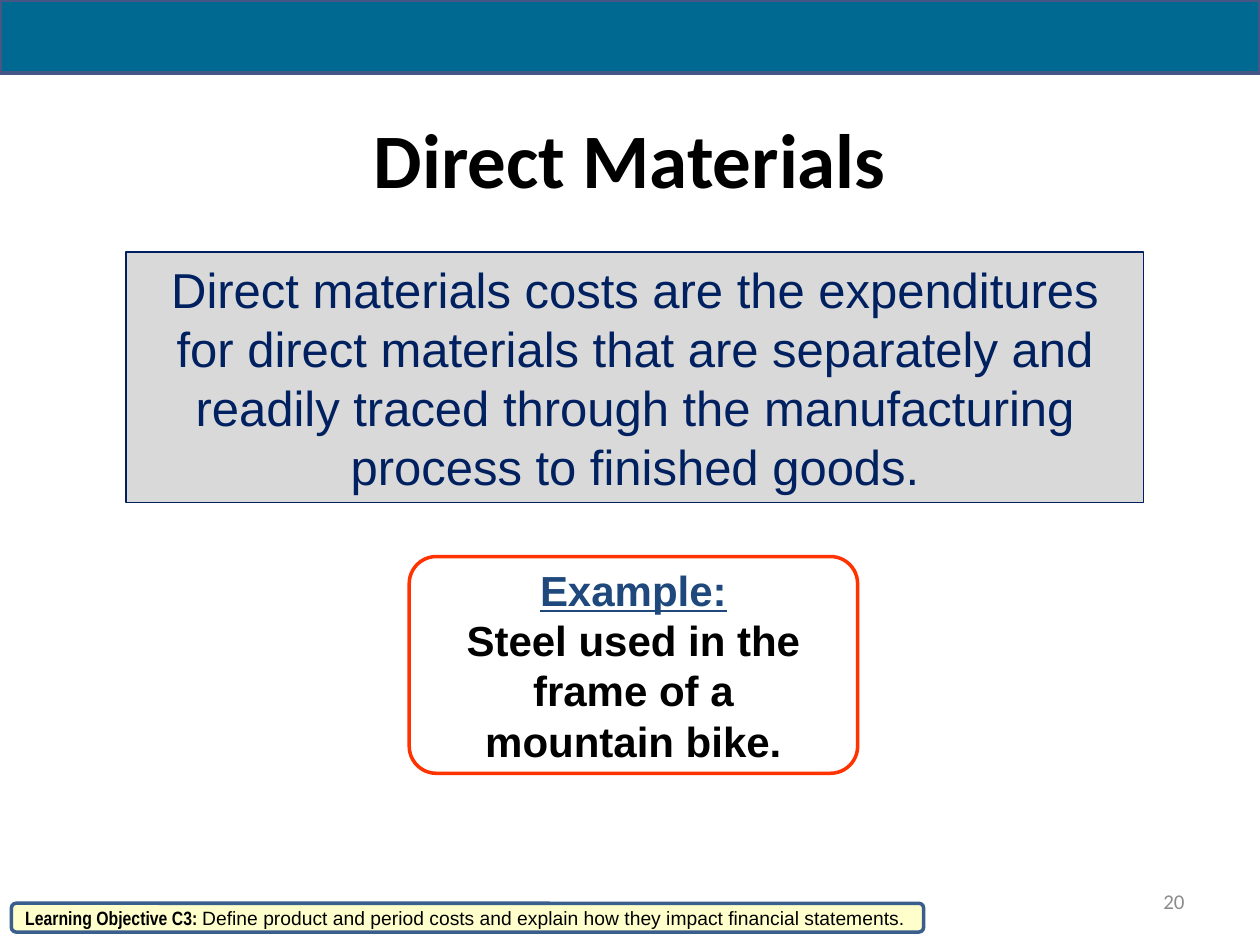
"""Build the Direct Materials slide."""
import dataclasses
import typing

import pptx
import pptx.dml.color
import pptx.enum.shapes
import pptx.enum.text
import pptx.util

Cm = pptx.util.Cm
RGBColor = pptx.dml.color.RGBColor
Shape = pptx.enum.shapes.MSO_SHAPE
Align = pptx.enum.text.PP_ALIGN
Anchor = pptx.enum.text.MSO_ANCHOR

BLACK = RGBColor(0x00, 0x00, 0x00)
WHITE = RGBColor(0xFF, 0xFF, 0xFF)
TEAL = RGBColor(0x00, 0x69, 0x91)
INDIGO = RGBColor(0x47, 0x57, 0x85)
NAVY = RGBColor(0x00, 0x20, 0x60)
BLUE = RGBColor(0x1F, 0x49, 0x7D)
STEEL = RGBColor(0x3A, 0x5F, 0x8C)
ORANGE = RGBColor(0xFF, 0x33, 0x00)
CREAM = RGBColor(0xFF, 0xFF, 0xCC)
LIGHT_GRAY = RGBColor(0xD9, 0xD9, 0xD9)
GRAY = RGBColor(0x8C, 0x8C, 0x8C)


@dataclasses.dataclass(frozen=True)
class Span:
    text: str
    size: float
    color: RGBColor
    font: str = "Arial"
    bold: bool = False
    underline: bool = False


@dataclasses.dataclass(frozen=True)
class Panel:
    kind: Shape
    place: tuple[float, float, float, float]
    fill: RGBColor
    line: RGBColor
    weight: float
    paragraphs: tuple[tuple[Span, ...], ...] = ()
    align: Align = Align.CENTER
    wrap: bool = True
    corner: typing.Optional[float] = None


PANELS = (
    Panel(Shape.ROUNDED_RECTANGLE, (8.25, 11.22, 9.04, 4.37), WHITE, ORANGE, 2, (
        (Span("Example:", 24, BLUE, bold=True, underline=True),),
        (Span("Steel used in the\nframe of a\nmountain bike.", 24, BLACK, bold=True),),
    ), wrap=False, corner=0.125),
    Panel(Shape.RECTANGLE, (2.54, 5.08, 20.52, 5.05), LIGHT_GRAY, NAVY, 0.75, (
        (Span("Direct materials costs are the expenditures for direct materials "
              "that are separately and readily traced through the manufacturing "
              "process to finished goods.", 28, NAVY),),
    )),
    Panel(Shape.RECTANGLE, (0, 0, 25.4, 1.47), TEAL, INDIGO, 2.25),
    Panel(Shape.ROUNDED_RECTANGLE, (0.23, 18.21, 18.39, 0.58), CREAM, STEEL, 2, (
        (Span("Learning Objective C3: ", 11, BLACK, "Arial Narrow", bold=True),
         Span("Define product and period costs and explain how they impact "
              "financial statements.", 11, BLACK)),
    ), align=Align.LEFT),
)


def place_box(box, place: tuple[float, float, float, float]) -> None:
    for name, length in zip(("left", "top", "width", "height"), place):
        setattr(box, name, Cm(length))


def write_text(box, paragraphs: tuple[tuple[Span, ...], ...], align: Align,
               wrap: bool = True) -> None:
    frame = box.text_frame
    frame.word_wrap = wrap
    frame.vertical_anchor = Anchor.MIDDLE
    for index, spans in enumerate(paragraphs):
        para = frame.add_paragraph() if index else frame.paragraphs[0]
        para.alignment = align
        for span in spans:
            write_span(para, span)


def write_span(para, span: Span) -> None:
    values = {"name": span.font, "size": pptx.util.Pt(span.size),
              "bold": span.bold, "underline": span.underline}
    for index, line in enumerate(span.text.split("\n")):
        if index:
            para.add_line_break()
        run = para.add_run()
        run.text = line
        for name, value in values.items():
            setattr(run.font, name, value)
        run.font.color.rgb = span.color


def draw_panel(page, panel: Panel) -> None:
    box = page.shapes.add_shape(panel.kind, *map(Cm, panel.place))
    box.shadow.inherit = False
    box.fill.solid()
    box.fill.fore_color.rgb = panel.fill
    box.line.color.rgb = panel.line
    box.line.width = pptx.util.Pt(panel.weight)
    if panel.corner is not None:
        box.adjustments[0] = panel.corner
    write_text(box, panel.paragraphs, panel.align, panel.wrap)


def main() -> None:
    deck = pptx.Presentation()
    deck.slide_width, deck.slide_height = Cm(25.4), Cm(19.05)
    page = deck.slides.add_slide(deck.slide_layouts[5])
    title = page.shapes.title
    place_box(title, (1.27, 1.91, 22.86, 2.54))
    write_text(title, ((Span("Direct Materials", 44, BLACK, "Calibri", bold=True),),),
               Align.CENTER)
    for panel in PANELS:
        draw_panel(page, panel)
    number = page.shapes.add_textbox(*map(Cm, (18.21, 17.65, 5.92, 1.02)))
    write_text(number, ((Span("20", 12, GRAY, "Calibri"),),), Align.RIGHT)
    deck.save("out.pptx")


if __name__ == "__main__":
    main()
